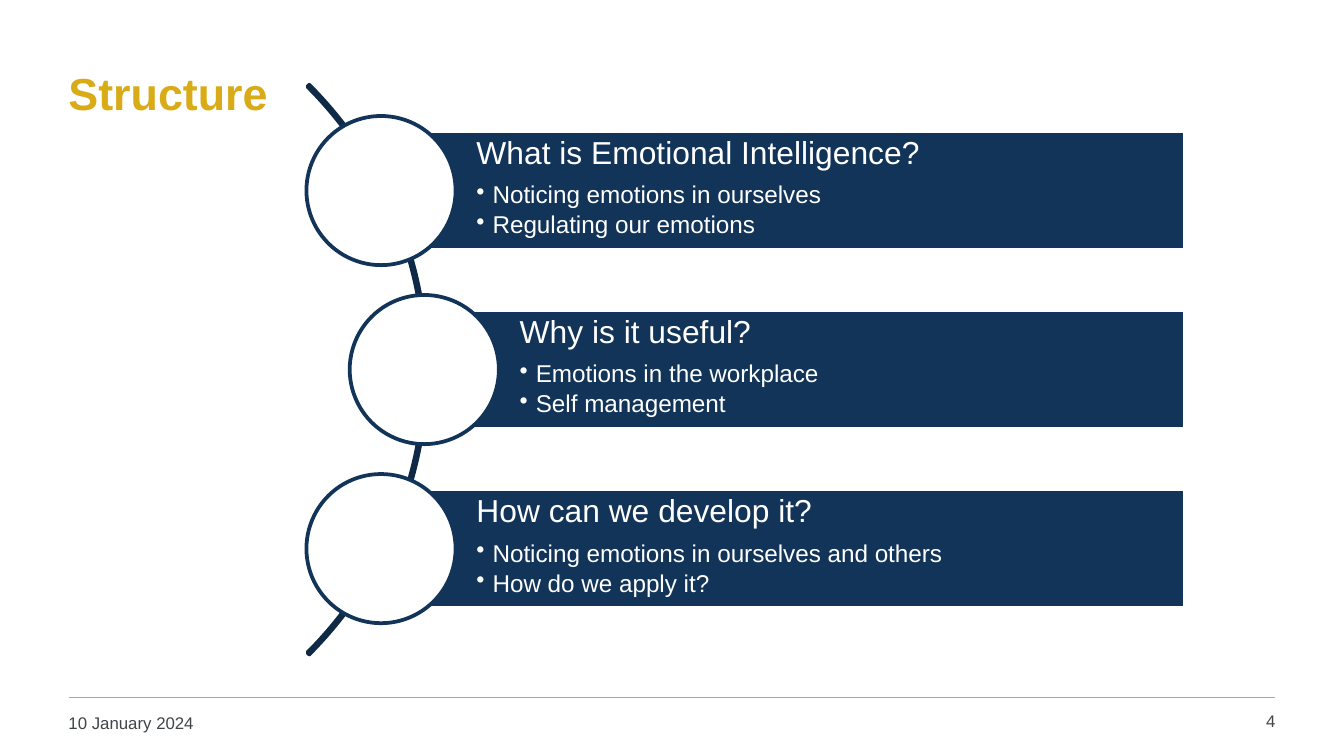
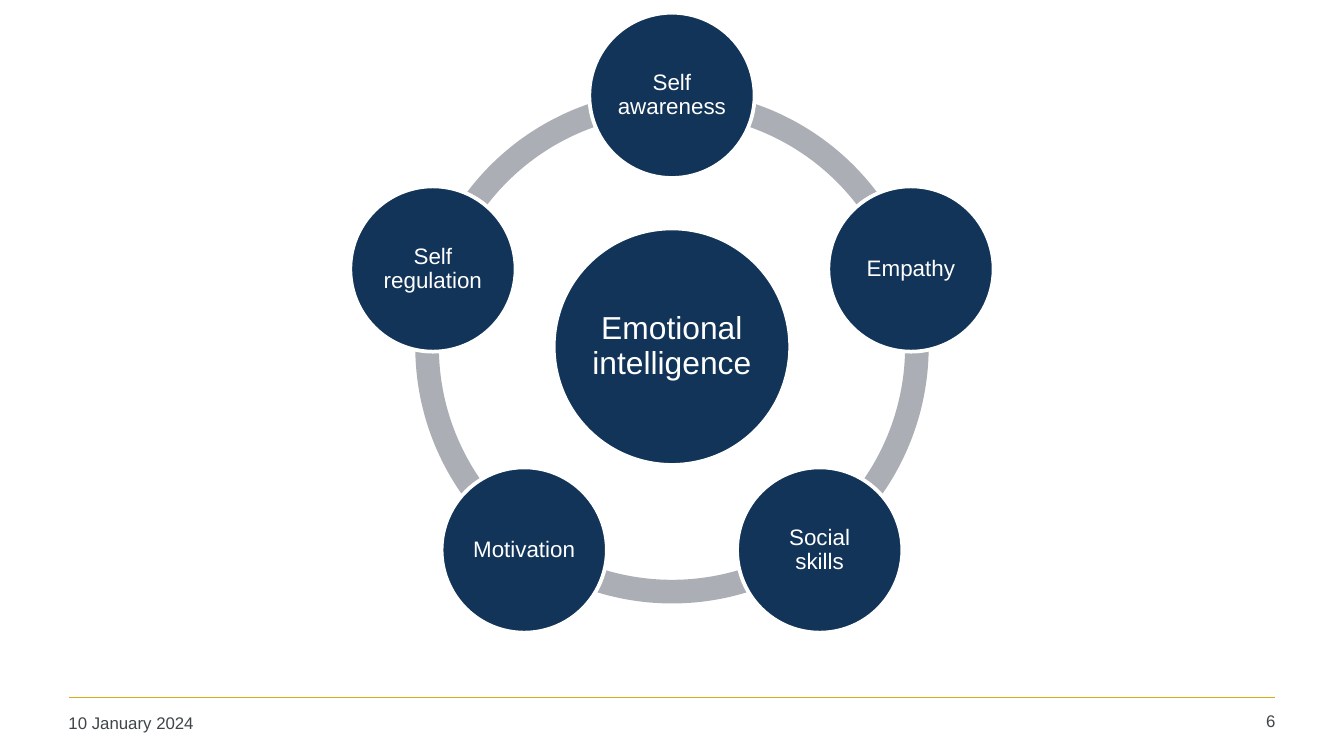
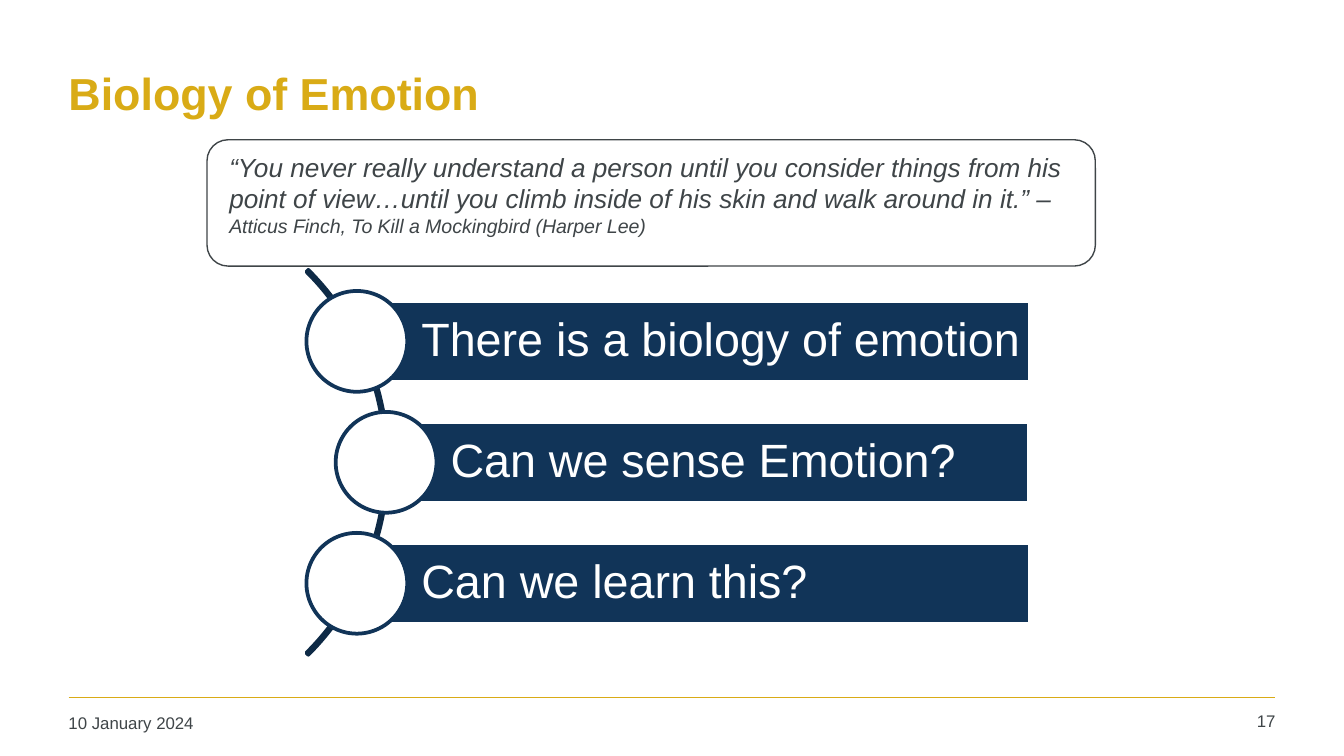
from math import cos, radians, sin

from lxml.etree import SubElement
from pptx import Presentation
from pptx.dml.color import RGBColor
from pptx.enum.shapes import MSO_CONNECTOR, MSO_SHAPE
from pptx.enum.text import MSO_ANCHOR, PP_ALIGN
from pptx.oxml.ns import qn
from pptx.util import Inches, Pt

# Content
DATE = "10 January 2024"
STRUCTURE = [
    ("What is Emotional Intelligence?",
     ["Noticing emotions in ourselves", "Regulating our emotions"]),
    ("Why is it useful?",
     ["Emotions in the workplace", "Self management"]),
    ("How can we develop it?",
     ["Noticing emotions in ourselves and others", "How do we apply it?"]),
]
HUB = "Emotional intelligence"
SKILLS = ["Self awareness", "Empathy", "Social skills", "Motivation",
          "Self regulation"]
QUOTE = [
    ("“You never really understand a person until you consider things from "
     "his point of view…until you climb inside of his skin and walk around "
     "in it.” – ", 14),
    ("Atticus Finch, To Kill a Mockingbird (Harper Lee)", 10.5),
]
QUESTIONS = [("There is a biology of emotion", []),
             ("Can we sense Emotion?", []),
             ("Can we learn this?", [])]

# Shared style
FONT = "Arial"
GOLD = RGBColor(0xD9, 0xAB, 0x16)
NAVY = RGBColor(0x11, 0x34, 0x58)
DARK_NAVY = RGBColor(0x0E, 0x2A, 0x46)
SLATE = RGBColor(0x3F, 0x45, 0x48)
SILVER = RGBColor(0xAB, 0xAE, 0xB5)
WHITE = RGBColor(0xFF, 0xFF, 0xFF)
WIDTH = 10
HEIGHT = WIDTH * 9 / 16
MARGIN = 0.51
BOX_INSETS = (0.08, 0.04, 0.08, 0.04)

prs = Presentation()
prs.slide_width, prs.slide_height = Inches(WIDTH), Inches(HEIGHT)


def add_text(p, text, size=12, color=WHITE, bold=False, italic=False,
             align=PP_ALIGN.LEFT, spacing=None, after=None, bullet=False):
    p.alignment = align
    if spacing:
        p.line_spacing = spacing
    if after:
        p.space_after = Pt(after)
    if bullet:
        pPr = p._p.get_or_add_pPr()
        pPr.set("marL", str(Inches(0.12)))
        pPr.set("indent", str(-Inches(0.12)))
        SubElement(pPr, qn("a:buChar")).set("char", "•")
    r = p.add_run()
    r.text = text
    f = r.font
    f.name, f.size, f.bold, f.italic = FONT, Pt(size), bold, italic
    f.color.rgb = color


def frame(sp, insets, anchor=MSO_ANCHOR.TOP):
    tf = sp.text_frame
    tf.word_wrap = True
    tf.vertical_anchor = anchor
    (tf.margin_left, tf.margin_top,
     tf.margin_right, tf.margin_bottom) = map(Inches, insets)
    return tf


def add_box(s, box, text, anchor=MSO_ANCHOR.TOP, **fmt):
    tf = frame(s.shapes.add_textbox(*map(Inches, box)), BOX_INSETS, anchor)
    add_text(tf.paragraphs[0], text, **fmt)


def add_shape(s, kind, box, fill=None, line=None, weight=2, adj=()):
    sp = s.shapes.add_shape(kind, *map(Inches, box))
    sp.shadow.inherit = False
    for i, value in enumerate(adj):
        sp.adjustments[i] = value
    if fill is None:
        sp.fill.background()
    else:
        sp.fill.solid()
        sp.fill.fore_color.rgb = fill
    if line is None:
        sp.line.fill.background()
    else:
        sp.line.color.rgb = line
        sp.line.width = Pt(weight)
    return sp


def add_slide(number, title=None):
    s = prs.slides.add_slide(prs.slide_layouts[6])
    rule = s.shapes.add_connector(MSO_CONNECTOR.STRAIGHT, Inches(MARGIN),
                                  Inches(5.19), Inches(WIDTH - MARGIN),
                                  Inches(5.19))
    rule.line.color.rgb = GOLD
    rule.line.width = Pt(1)
    SubElement(rule._element.spPr, qn("a:effectLst"))
    if title:
        add_box(s, (0.43, 0.22, 9.07, 0.94), title, MSO_ANCHOR.MIDDLE,
                size=24, color=GOLD, bold=True)
    add_box(s, (0.43, 5.26, 2.2, 0.27), DATE, size=9, color=SLATE)
    add_box(s, (8.86, 5.25, 0.71, 0.28), str(number), size=9, color=SLATE,
            align=PP_ALIGN.RIGHT)
    return s


def add_curved_list(s, items, d, left, middle, right, size, pad, anchor):
    """Bars with circles of diameter d, strung along an arc."""
    arc = 5.4 * d
    add_shape(s, MSO_SHAPE.BLOCK_ARC,
              (left - 4.59 * d, middle - arc / 2, arc, arc), line=DARK_NAVY,
              adj=(315 * 0.6, 45 * 0.6, 0.02 / arc))
    for i, (heading, points) in enumerate(items):
        x = left + (0.29 * d if i == 1 else 0)
        y = middle + (i - 1) * 1.2 * d
        bar_left = x + d / 2
        bar = add_shape(s, MSO_SHAPE.RECTANGLE,
                        (bar_left, y - 0.4 * d, right - bar_left, 0.8 * d),
                        NAVY, WHITE)
        tf = frame(bar, (0.64 * d, pad, pad, pad), anchor)
        add_text(tf.paragraphs[0], heading, size=size, spacing=0.9,
                 after=6 if points else None)
        for point in points:
            add_text(tf.add_paragraph(), point, size=13, spacing=0.9,
                     after=2, bullet=True)
        add_shape(s, MSO_SHAPE.OVAL, (x, y - d / 2, d, d), WHITE, NAVY)


def add_disc(s, cx, cy, d, text, size):
    sp = add_shape(s, MSO_SHAPE.OVAL, (cx - d / 2, cy - d / 2, d, d),
                   NAVY, WHITE)
    tf = frame(sp, (0.02,) * 4, MSO_ANCHOR.MIDDLE)
    add_text(tf.paragraphs[0], text, size=size, spacing=0.9,
             align=PP_ALIGN.CENTER)


# Structure
s = add_slide(4, "Structure")
add_curved_list(s, STRUCTURE, d=1.11, left=2.28, middle=2.75, right=8.82,
                size=17, pad=0.05, anchor=MSO_ANCHOR.TOP)

# Wheel of emotional intelligence
s = add_slide(6)
cx, cy, orbit, ring = WIDTH / 2, 2.58, 1.87, 3.82
step = 360 / len(SKILLS)
angles = [270 + i * step for i in range(len(SKILLS))]
for a in angles:
    add_shape(s, MSO_SHAPE.BLOCK_ARC,
              (cx - ring / 2, cy - ring / 2, ring, ring), SILVER,
              adj=(a % 360 * 0.6, (a + step) % 360 * 0.6, 0.046))
add_disc(s, cx, cy, 1.76, HUB, 17)
for skill, a in zip(SKILLS, angles):
    add_disc(s, cx + orbit * cos(radians(a)), cy + orbit * sin(radians(a)),
             1.23, skill, 12)

# Biology of emotion
s = add_slide(17, "Biology of Emotion")
card = add_shape(s, MSO_SHAPE.ROUNDED_RECTANGLE, (1.54, 1.04, 6.61, 0.94),
                 line=SLATE, weight=0.75)
p = frame(card, (0.12, 0.04, 0.05, 0.05)).paragraphs[0]
for text, size in QUOTE:
    add_text(p, text, size=size, color=SLATE, italic=True)
add_curved_list(s, QUESTIONS, d=0.75, left=2.28, middle=3.44, right=7.66,
                size=25, pad=0.07, anchor=MSO_ANCHOR.MIDDLE)

prs.save("out.pptx")
